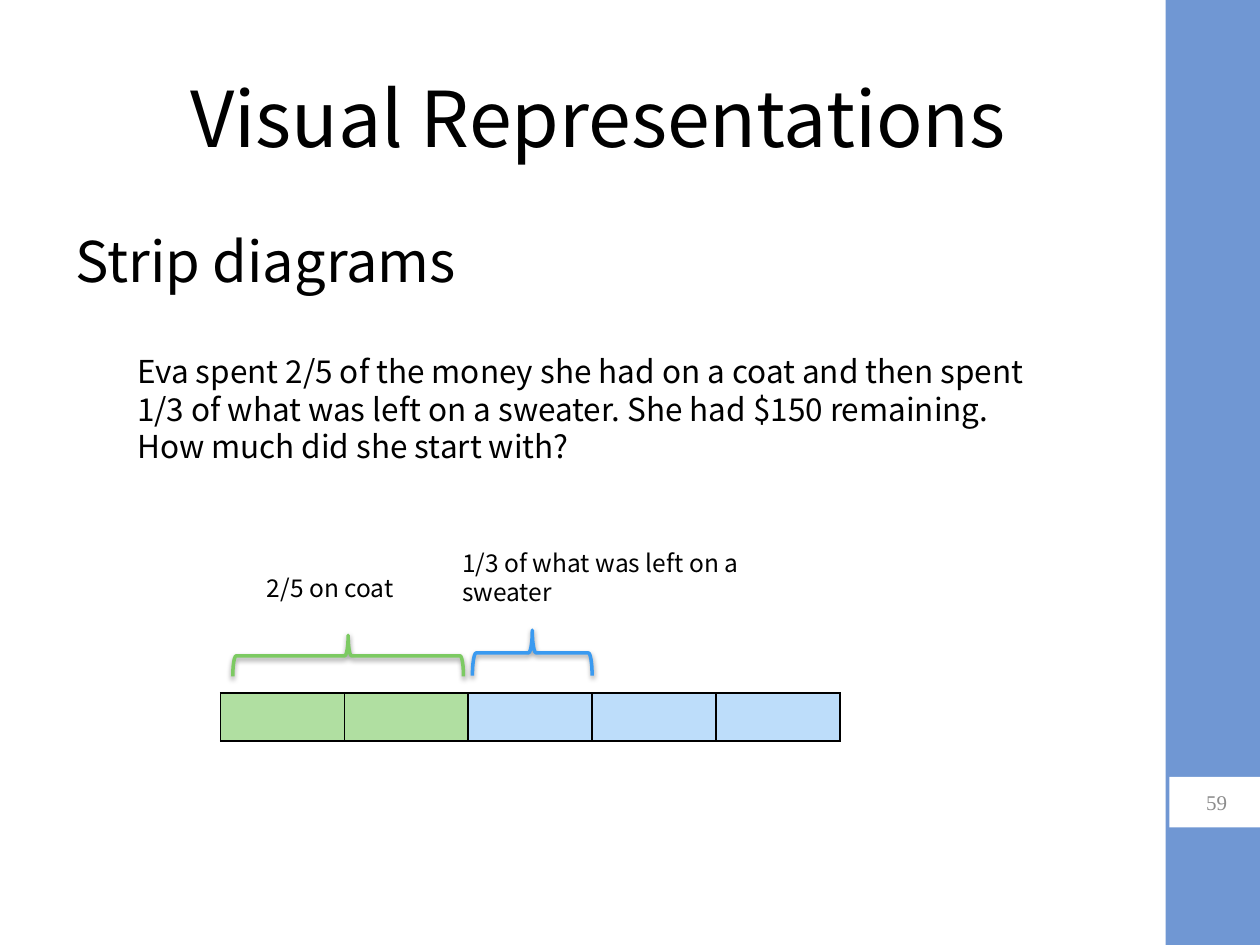
import pptx
import pptx.util
import pptx.dml.color
import pptx.enum.shapes
import pptx.enum.text
import pptx.oxml
import pptx.oxml.ns
from dataclasses import dataclass

Pt = pptx.util.Pt
RGB = pptx.dml.color.RGBColor.from_string
Shape = pptx.enum.shapes.MSO_SHAPE
Align = pptx.enum.text.PP_ALIGN
Anchor = pptx.enum.text.MSO_ANCHOR
NS = pptx.oxml.ns.nsdecls("a")


@dataclass(frozen=True)
class Theme:
    font: str = "Noto Sans CJK TC"
    number_font: str = "Times New Roman"
    ink: str = "000000"
    paper: str = "FFFFFF"
    band: str = "7097D3"
    number: str = "8C8C8C"
    coat: str = "B0DFA1"
    coat_line: str = "7CCA62"
    rest: str = "BDDDFA"
    rest_line: str = "3A9AF0"
    title_size: int = 44
    heading_size: int = 32
    problem_size: int = 18
    label_size: int = 14
    number_size: int = 12


theme = Theme()
deck = pptx.Presentation()
deck.slide_width, deck.slide_height = Pt(720), Pt(540)
slide = deck.slides.add_slide(deck.slide_layouts[6])


def add_panel(left, top, width, height, color):
    panel = slide.shapes.add_shape(Shape.RECTANGLE, Pt(left), Pt(top), Pt(width), Pt(height))
    panel.shadow.inherit = False
    panel.fill.solid()
    panel.fill.fore_color.rgb = RGB(color)
    panel.line.fill.background()
    return panel


def write(shape, words, size, font=theme.font, color=theme.ink, align=Align.LEFT, anchor=Anchor.TOP):
    frame = shape.text_frame
    frame.word_wrap = True
    frame.vertical_anchor = anchor
    paragraph = frame.paragraphs[0]
    paragraph.text = words
    paragraph.alignment = align
    paragraph.font.size = Pt(size)
    paragraph.font.name = font
    paragraph.font.color.rgb = RGB(color)
    return paragraph


add_panel(666, 0, 54, 540, theme.band)
page_number = add_panel(668.2, 444, 54, 28.8, theme.paper)
write(page_number, "59", theme.number_size, theme.number_font, theme.number, Align.CENTER, Anchor.MIDDLE)

title = slide.shapes.add_textbox(Pt(36), Pt(21.6), Pt(612), Pt(90))
write(title, "Visual Representations", theme.title_size, align=Align.CENTER, anchor=Anchor.MIDDLE)

for words, left, top, width, height, size, leading in (
    ("Strip diagrams", 36, 126, 612, 60, theme.heading_size, None),
    ("Eva spent 2/5 of the money she had on a coat and then spent 1/3 of what was left on a sweater. "
     "She had $150 remaining. How much did she start with?", 71.3, 198, 522.7, 72.7, theme.problem_size, 21.4),
    ("2/5 on coat", 145.4, 324, 95.8, 24.5, theme.label_size, 16.6),
    ("1/3 of what was left on a sweater", 257, 309.6, 221.8, 41, theme.label_size, 16.6),
):
    passage = slide.shapes.add_textbox(Pt(left), Pt(top), Pt(width), Pt(height))
    paragraph = write(passage, words, size)
    if leading:
        paragraph.line_spacing = Pt(leading)

strip_colors = [theme.coat] * 2 + [theme.rest] * 3
strip = slide.shapes.add_table(1, len(strip_colors), Pt(126), Pt(396), Pt(354), Pt(27.4)).table
for column, color in enumerate(strip_colors):
    strip.columns[column].width = Pt(70.8)
    part = strip.cell(0, column)
    part.margin_top = part.margin_bottom = 0
    for side in ("lnL", "lnR", "lnT", "lnB"):
        part._tc.get_or_add_tcPr().append(pptx.oxml.parse_xml(
            f'<a:{side} {NS} w="12700"><a:solidFill><a:srgbClr val="{theme.ink}"/></a:solidFill></a:{side}>'))
    part.fill.solid()
    part.fill.fore_color.rgb = RGB(color)

for left, top, width, height, color in (
    (187.2, 308.9, 23.4, 131.8, theme.coat_line),
    (291.2, 338.9, 25.9, 68.4, theme.rest_line),
):
    brace = slide.shapes.add_shape(Shape.LEFT_BRACE, Pt(left), Pt(top), Pt(width), Pt(height))
    brace.rotation = 90
    brace.fill.background()
    brace.line.color.rgb = RGB(color)
    brace.line.width = Pt(2)
    brace.shadow.inherit = False
    effects = brace._element.spPr.find(pptx.oxml.ns.qn("a:effectLst"))
    effects.append(pptx.oxml.parse_xml(
        f'<a:outerShdw {NS} blurRad="{Pt(3.1)}" dist="{Pt(1.6)}" dir="5400000" rotWithShape="0">'
        f'<a:srgbClr val="{theme.ink}"><a:alpha val="38000"/></a:srgbClr></a:outerShdw>'))

deck.save("out.pptx")
